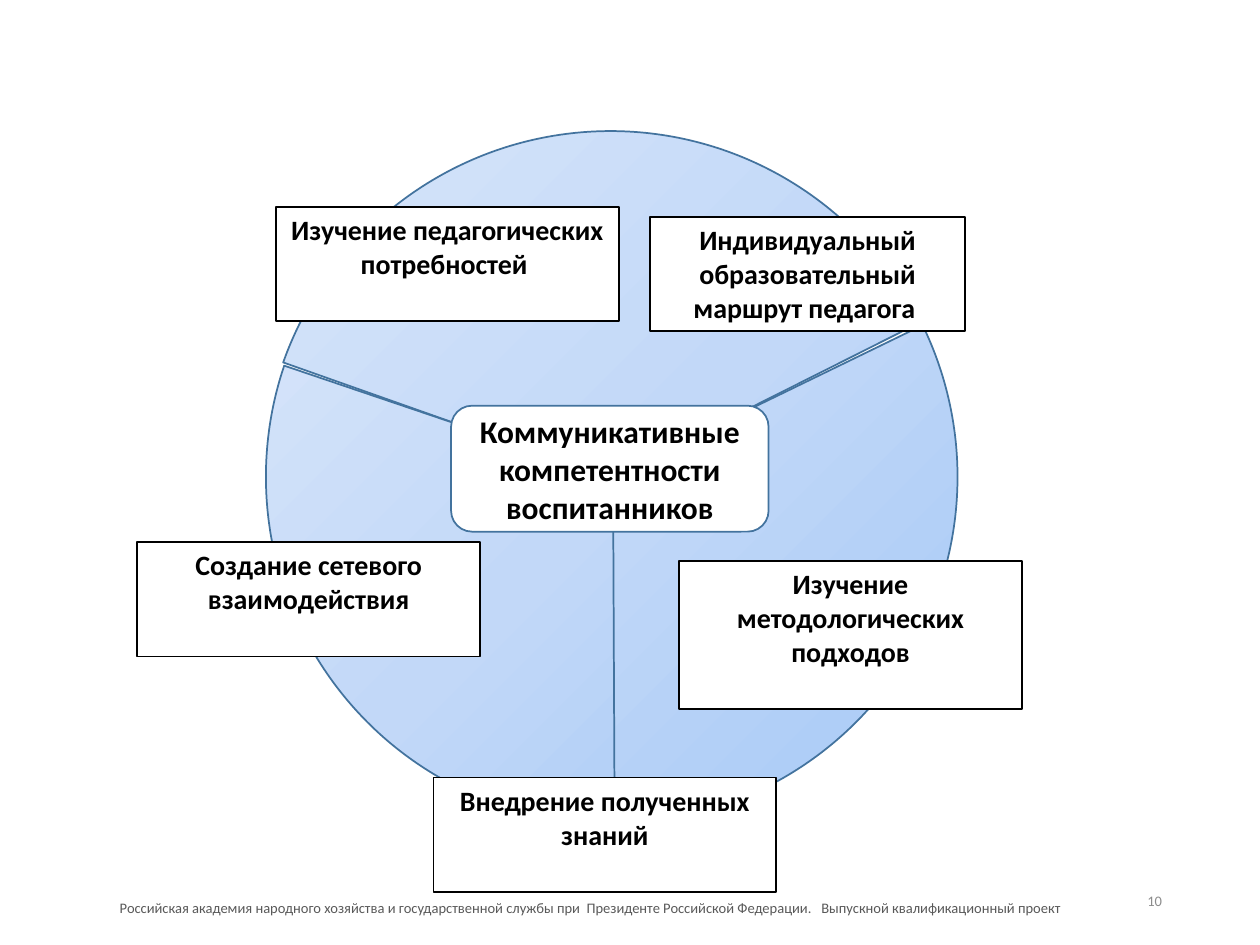
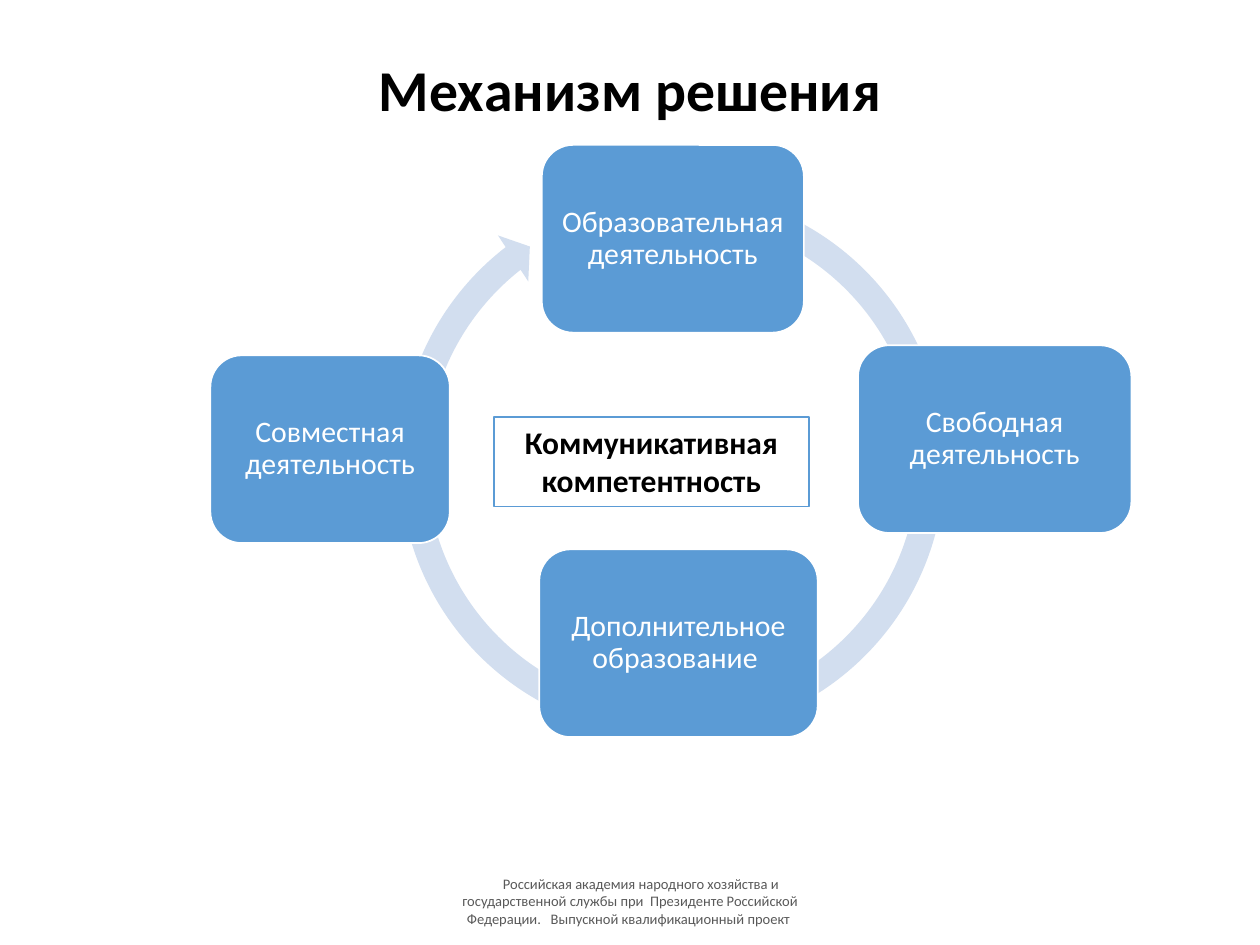
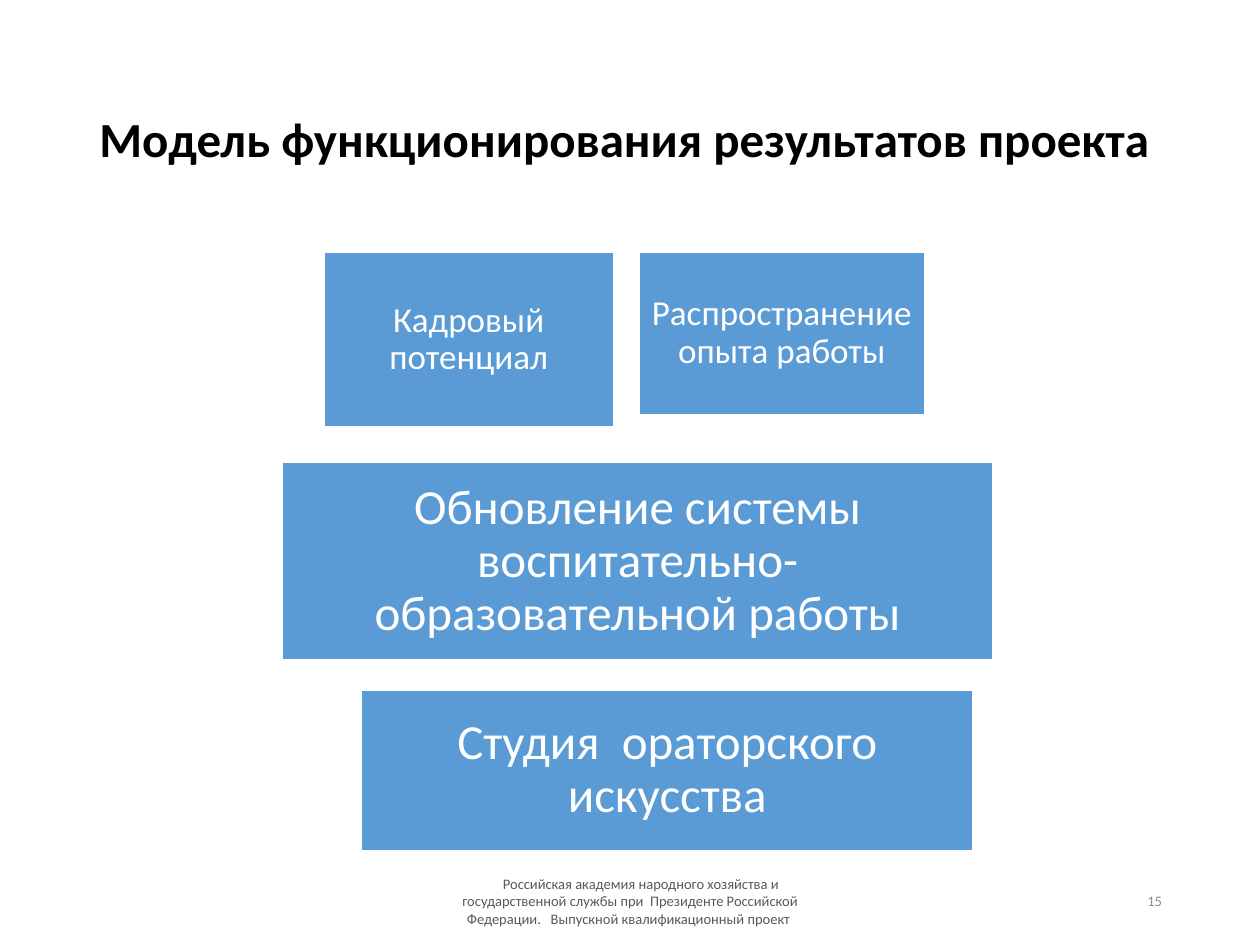
"""Build three slides on pupils' communicative competence."""
import lxml.etree
import pptx
import pptx.dml.color
import pptx.enum.shapes
import pptx.enum.text
import pptx.oxml
import pptx.oxml.ns
import pptx.util

Inches = pptx.util.Inches
SHAPES = pptx.enum.shapes.MSO_SHAPE
ALIGN = pptx.enum.text.PP_ALIGN
ANCHOR = pptx.enum.text.MSO_ANCHOR

FONT = "Calibri"
BLACK, WHITE, BLUE, NAVY = "000000", "FFFFFF", "5B9BD5", "43739E"
ARROW_COLOR, FOOTER_COLOR, NUMBER_COLOR = "D2DEEF", "595959", "8C8C8C"
SECTOR_STOPS = [(0, "9AC3F5"), (49, "C2D8F8"), (100, "E1EBFB")]

FOOTER = (
    "Российская академия народного хозяйства и государственной службы "
    "при  Президенте Российской Федерации.   Выпускной квалификационный проект "
)
FOOTER_SIZE = 8.3
WIDE_FOOTER = (0.28, 7.06, 8.66, 0.29)
NARROW_FOOTER = (3.31, 6.95, 3.38, 0.4)
NUMBER_PLACE = (7.07, 6.95, 2.25, 0.4)

SECTOR_SIZE = 5.51
SECTORS = [
    (2.09, 1.03, 326.3, 7.79, 123.85),
    (2.09, 1.04, 221.3, 338.17, 111.98),
    (2.11, 1.03, 101.4, 348.34, 97.29),
]
COMPETENCE = ("Коммуникативные компетентности воспитанников", (3.58, 3.22, 2.52, 1))
DIRECTIONS = [
    ("Изучение педагогических потребностей ", (2.19, 1.64, 2.72, 0.91)),
    ("Индивидуальный образовательный маршрут педагога ", (5.16, 1.72, 2.5, 0.91)),
    ("Изучение методологических подходов", (5.39, 4.45, 2.72, 1.18)),
    ("Создание сетевого взаимодействия", (1.09, 4.3, 2.72, 0.91)),
    ("Внедрение полученных знаний", (3.44, 6.17, 2.72, 0.91)),
]

CYCLE_PLACE = (3.06, 1.4, 4.55, 4.55)
CYCLE_ADJUSTMENTS = (0.047, 2.729, 139.283, 173.286, 0.048)
ACTIVITY_HEIGHT = 1.49
ACTIVITIES = [
    ("Образовательная деятельность", 4.3, 1.15, 2.08),
    ("Свободная деятельность", 6.81, 2.74, 2.17),
    ("Дополнительное образование ", 4.28, 4.36, 2.21),
    ("Совместная деятельность", 1.67, 2.82, 1.9),
]
CYCLE_CENTER = ("Коммуникативная компетентность", (3.92, 3.31, 2.5, 0.71))

RESULTS = [
    ("Кадровый потенциал", (2.57, 2, 2.3, 1.39), 20, 0.08),
    ("Распространение опыта работы", (5.07, 2, 2.27, 1.29), 20, 0.08),
    ("Обновление системы воспитательно-образовательной работы", (2.24, 3.67, 5.64, 1.57), 28, 0.12),
    ("Студия  ораторского искусства", (2.87, 5.48, 4.85, 1.27), 28, 0.12),
]


def rgb(color):
    return pptx.dml.color.RGBColor.from_string(color)


def write(box, text, size, color=BLACK, bold=False, align=ALIGN.CENTER,
          anchor=ANCHOR.MIDDLE, spacing=None, inset=None):
    frame = box.text_frame
    frame.word_wrap = True
    frame.vertical_anchor = anchor
    if inset is not None:
        frame.margin_left = frame.margin_right = Inches(inset)
        frame.margin_top = frame.margin_bottom = Inches(inset)
    frame.text = text
    para = frame.paragraphs[0]
    para.alignment = align
    para.line_spacing = spacing
    font = para.runs[0].font
    font.name, font.size, font.bold = FONT, pptx.util.Pt(size), bold
    font.color.rgb = rgb(color)
    return para


def add_text(page, place, text, size, **style):
    box = page.shapes.add_textbox(*map(Inches, place))
    return write(box, text, size, **style)


def add_shape(page, kind, place, fill, line=None):
    shape = page.shapes.add_shape(kind, *map(Inches, place))
    shape.shadow.inherit = False
    if fill:
        shape.fill.solid()
        shape.fill.fore_color.rgb = rgb(fill)
    if line:
        shape.line.color.rgb = rgb(line)
        shape.line.width = pptx.util.Pt(1)
    else:
        shape.line.fill.background()
    return shape


def fill_from_corner(shape, stops):
    shape.fill.background()
    blank = shape.element.spPr.find(pptx.oxml.ns.qn("a:noFill"))
    marks = "".join(
        f'<a:gs pos="{position * 1000}"><a:srgbClr val="{color}"/></a:gs>'
        for position, color in stops
    )
    gradient = pptx.oxml.parse_xml(
        f'<a:gradFill {pptx.oxml.ns.nsdecls("a")} rotWithShape="0"><a:gsLst>{marks}</a:gsLst>'
        '<a:path path="circle"><a:fillToRect l="100000" t="100000"/></a:path></a:gradFill>'
    )
    blank.getparent().replace(blank, gradient)


def add_footer(page, place, number=None):
    para = add_text(page, place, FOOTER, FOOTER_SIZE, color=FOOTER_COLOR)
    para._p.get_or_add_pPr().set("indent", str(Inches(0.17)))
    if number:
        add_text(page, NUMBER_PLACE, number, FOOTER_SIZE, color=NUMBER_COLOR, align=ALIGN.RIGHT)


def build_directions(page):
    for left, top, rotation, start, end in SECTORS:
        sector = add_shape(page, SHAPES.PIE, (left, top, SECTOR_SIZE, SECTOR_SIZE), None, NAVY)
        sector.rotation = rotation
        sector.adjustments[0], sector.adjustments[1] = start * 0.6, end * 0.6
        fill_from_corner(sector, SECTOR_STOPS)
    add_footer(page, WIDE_FOOTER, "10")
    text, place = COMPETENCE
    write(add_shape(page, SHAPES.ROUNDED_RECTANGLE, place, WHITE, NAVY), text, 18, bold=True)
    for text, place in DIRECTIONS:
        box = add_shape(page, SHAPES.RECTANGLE, place, WHITE, BLACK)
        write(box, text, 16, bold=True, anchor=ANCHOR.TOP)


def build_mechanism(page):
    add_text(page, (0.69, 0.4, 8.62, 0.67), "Механизм решения", 33, bold=True, spacing=0.9)
    cycle = add_shape(page, SHAPES.CIRCULAR_ARROW, CYCLE_PLACE, ARROW_COLOR)
    for index, value in enumerate(CYCLE_ADJUSTMENTS):
        cycle.adjustments[index] = value
    for text, left, top, width in ACTIVITIES:
        place = (left, top, width, ACTIVITY_HEIGHT)
        box = add_shape(page, SHAPES.ROUNDED_RECTANGLE, place, BLUE, WHITE)
        write(box, text, 17, color=WHITE, spacing=0.9, inset=0.07)
    add_footer(page, NARROW_FOOTER)
    text, place = CYCLE_CENTER
    box = add_shape(page, SHAPES.RECTANGLE, place, WHITE, BLUE)
    write(box, text, 18, bold=True, anchor=ANCHOR.TOP)


def build_results(page):
    add_text(page, (0.69, 0.4, 8.62, 1.45), "Модель функционирования результатов проекта", 28,
             bold=True, align=ALIGN.LEFT, spacing=0.9)
    for text, place, size, inset in RESULTS:
        box = add_shape(page, SHAPES.RECTANGLE, place, BLUE, WHITE)
        write(box, text, size, color=WHITE, spacing=0.9, inset=inset)
    add_footer(page, NARROW_FOOTER, "15")


def main():
    deck = pptx.Presentation()
    deck.slide_width, deck.slide_height = Inches(10), Inches(7.5)
    for build in (build_directions, build_mechanism, build_results):
        build(deck.slides.add_slide(deck.slide_layouts[6]))
    deck.save("out.pptx")


if __name__ == "__main__":
    main()
